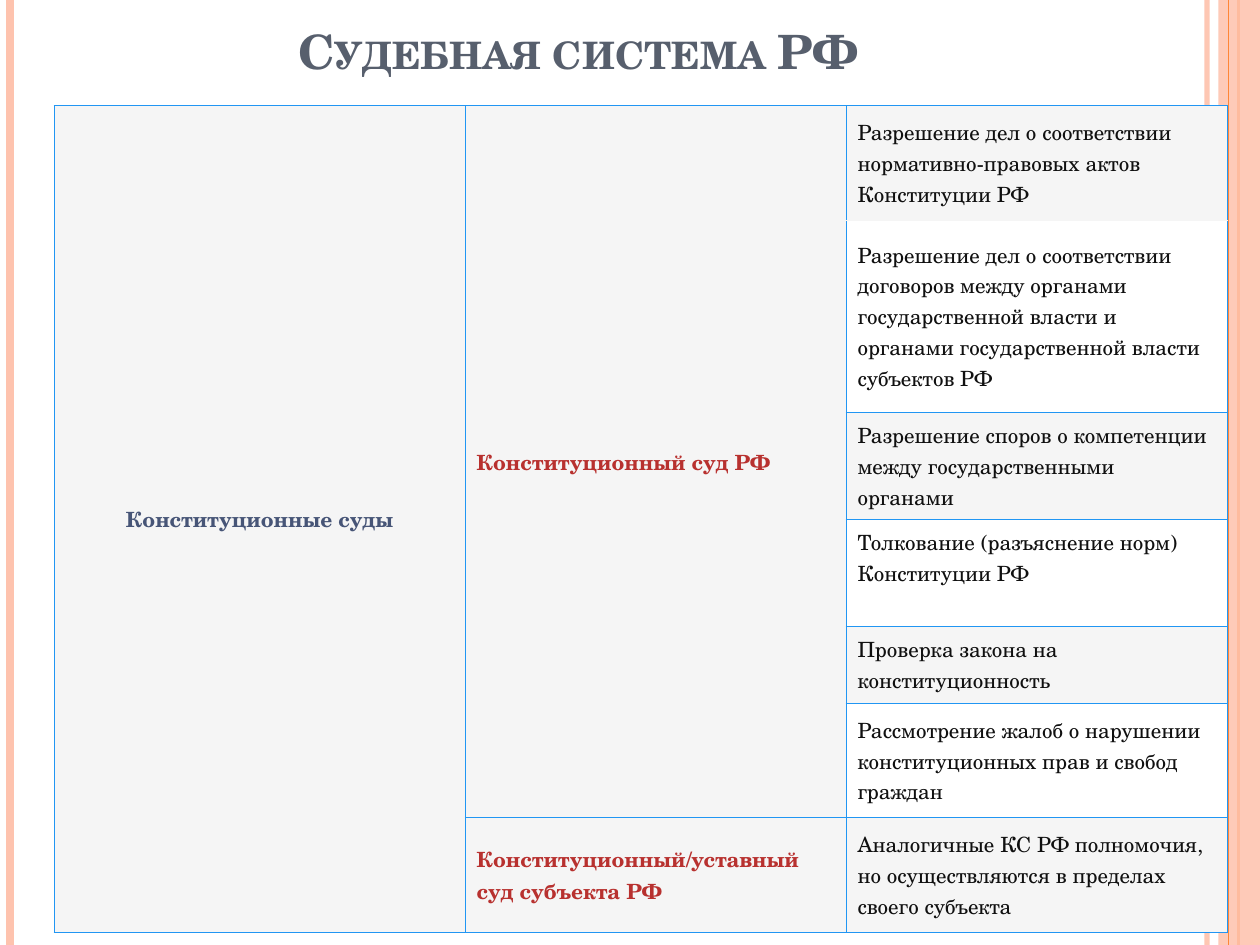
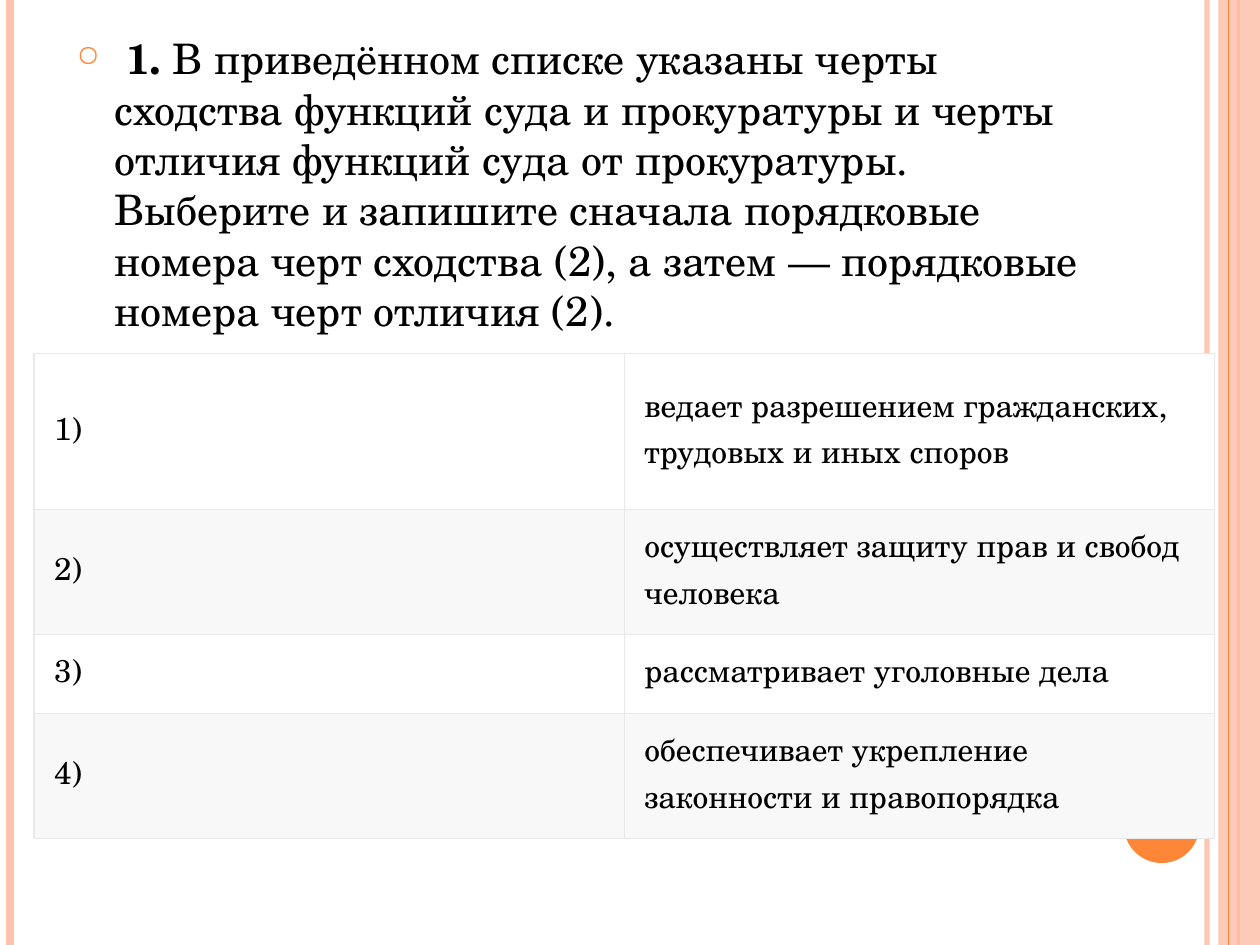
from lxml.etree import SubElement
from pptx import Presentation
from pptx.dml.color import RGBColor
from pptx.enum.shapes import MSO_CONNECTOR, MSO_SHAPE
from pptx.enum.text import MSO_ANCHOR, PP_ALIGN
from pptx.oxml.ns import qn
from pptx.util import Inches, Pt

W, H = Inches(10), Inches(7.5)
FONT = "TeX Gyre Schola"
PEACH, ORANGE, SLATE = "FEC3AE", "FE8637", "575F6D"
BLUE, NAVY, RED, INK = "2196F3", "475577", "B8312F", "101010"
WHITE, GREY, PALE, RULE, BLACK = "FFFFFF", "F5F5F5", "F8F8F8", "E9E9E9", "000000"

POWERS = [
    "Разрешение дел о соответствии нормативно-правовых актов Конституции РФ",
    "Разрешение дел о соответствии договоров между органами государственной власти "
    "и органами государственной власти субъектов РФ",
    "Разрешение споров о компетенции между государственными органами",
    "Толкование (разъяснение норм) Конституции РФ",
    "Проверка закона на конституционность",
    "Рассмотрение жалоб о нарушении конституционных прав и свобод граждан",
    "Аналогичные КС РФ полномочия, но осуществляются в пределах своего субъекта",
]
TRAITS = [
    "ведает разрешением гражданских, трудовых и иных споров",
    "осуществляет защиту прав и свобод человека",
    "рассматривает уголовные дела",
    "обеспечивает укрепление законности и правопорядка",
]
TASK = ("В приведённом списке указаны черты сходства функций суда и прокуратуры и черты "
        "отличия функций суда от прокуратуры. Выберите и запишите сначала порядковые "
        "номера черт сходства (2), а затем — порядковые номера черт отличия (2).")


def paint(fmt, color, alpha=100):
    """Set a solid colour on a fill or a line fill, with opacity in percent."""
    fmt.solid()
    fmt.fore_color.rgb = RGBColor.from_string(color)
    if alpha < 100:
        clr = fmt._xPr.find(qn("a:solidFill"))[0]
        SubElement(clr, qn("a:alpha"), val=str(alpha * 1000))


def place(box):
    """Turn a box in shares of the slide into lengths."""
    x, y, w, h = box
    return int(x * W), int(y * H), int(w * W), int(h * H)


def style(item, size, color, bold=False):
    """Set the font of a paragraph or a run."""
    item.font.name, item.font.size, item.font.bold = FONT, Pt(size), bold
    item.font.color.rgb = RGBColor.from_string(color)


def add_rule(slide, x, color, width, alpha=100):
    """Draw a full-height vertical line at a share of the width."""
    line = slide.shapes.add_connector(MSO_CONNECTOR.STRAIGHT, int(x * W), 0, int(x * W), H)
    line.line.width = Pt(width)
    paint(line.line.fill, color, alpha)
    SubElement(line._element.spPr, qn("a:effectLst"))


def add_block(slide, kind, box, color, alpha=100):
    """Draw a filled shape without outline."""
    sp = slide.shapes.add_shape(kind, *place(box))
    sp.shadow.inherit = False
    paint(sp.fill, color, alpha)
    sp.line.fill.background()


def add_frame(slide):
    """Draw the side bands and the dot that all slides share."""
    add_rule(slide, 0.958, PEACH, 3, 93)
    add_rule(slide, 0.008, PEACH, 4.5)
    add_rule(slide, 0.983, ORANGE, 1.5)
    add_block(slide, MSO_SHAPE.RECTANGLE, (0.967, 0, 0.033, 1), PEACH, 87)
    add_rule(slide, 0.975, ORANGE, 0.75)
    add_block(slide, MSO_SHAPE.OVAL, (0.892, 5 / 6, 0.06, 0.08), ORANGE)


def add_text(slide, box, anchor):
    """Add a wrapping text box and return its first paragraph."""
    tf = slide.shapes.add_textbox(*place(box)).text_frame
    tf.word_wrap, tf.vertical_anchor = True, anchor
    return tf.paragraphs[0]


def add_title(slide, box, text):
    """Add a centred title in small capitals."""
    p = add_text(slide, box, MSO_ANCHOR.BOTTOM)
    p.alignment = PP_ALIGN.CENTER
    r = p.add_run()
    r.text = text
    style(r, 27, SLATE, True)
    r.font._element.set("cap", "small")


def add_task(slide, box, number, text):
    """Add the bulleted wording of a task with its number in bold."""
    p = add_text(slide, box, MSO_ANCHOR.TOP)
    p.space_before = Pt(6)
    for part, bold in ((" ", False), (number, True), (" " + text, False)):
        r = p.add_run()
        r.text = part
        style(r, 24, BLACK, bold)
    pPr = p._p.get_or_add_pPr()
    pPr.set("marL", str(Inches(0.3)))
    pPr.set("indent", str(-Inches(0.3)))
    SubElement(SubElement(pPr, qn("a:buClr")), qn("a:srgbClr"), val=ORANGE)
    SubElement(pPr, qn("a:buSzPct"), val="70000")
    SubElement(pPr, qn("a:buChar"), char="○")


def add_grid(slide, box, cols, rows):
    """Add a plain table whose columns and rows share the box by weight."""
    x, y, w, h = place(box)
    table = slide.shapes.add_table(len(rows), len(cols), x, y, w, h).table
    table.first_row = table.horz_banding = False
    for col, weight in zip(table.columns, cols):
        col.width = int(w * weight / sum(cols))
    for row, weight in zip(table.rows, rows):
        row.height = int(h * weight / sum(rows))
    return table


def dress(cell, fill, border, insets, **sides):
    """Fill a cell, set its insets and border it, with other colours for named sides."""
    paint(cell.fill, fill)
    cell.vertical_anchor = MSO_ANCHOR.MIDDLE
    cell.margin_left, cell.margin_top, cell.margin_right, cell.margin_bottom = map(Inches, insets)
    tcPr = cell._tc.get_or_add_tcPr()
    for i, side in enumerate("LRTB"):
        ln = SubElement(tcPr, qn("a:ln" + side), w=str(Pt(0.75)))
        solid = SubElement(ln, qn("a:solidFill"))
        SubElement(solid, qn("a:srgbClr"), val=sides.get(side, border))
        tcPr.insert(i, ln)


def write(cell, text, size, color, bold=False, align=PP_ALIGN.LEFT):
    """Write one paragraph into a table cell."""
    p = cell.text_frame.paragraphs[0]
    p.text, p.alignment = text, align
    style(p, size, color, bold)


def add_courts(slide, box):
    """Add the table of constitutional courts and their powers."""
    table = add_grid(slide, box, (3.26, 3.02, 3.02), (0.91, 1.52, 0.85, 0.85, 0.61, 0.91, 0.91))
    insets = (0.09, 0.06, 0.09, 0.06)
    soft_sides = {0: {"B": GREY}, 1: {"T": GREY}}
    for i, power in enumerate(POWERS):
        for j in range(2):
            dress(table.cell(i, j), GREY, BLUE, insets)
        cell = table.cell(i, 2)
        dress(cell, WHITE if i % 2 else GREY, BLUE, insets, **soft_sides.get(i, {}))
        write(cell, power, 12, INK)
    table.cell(3, 2).vertical_anchor = MSO_ANCHOR.TOP
    table.cell(0, 0).merge(table.cell(6, 0))
    table.cell(0, 1).merge(table.cell(5, 1))
    write(table.cell(0, 0), "Конституционные суды", 12, NAVY, True, PP_ALIGN.CENTER)
    write(table.cell(0, 1), "Конституционный суд РФ", 12, RED, True)
    write(table.cell(6, 1), "Конституционный/уставный суд субъекта РФ", 12, RED, True)


def add_traits(slide, box):
    """Add the numbered table of traits to choose from."""
    table = add_grid(slide, box, (1, 1), (1.24, 0.99, 0.63, 0.99))
    for i, trait in enumerate(TRAITS):
        for j, text in enumerate((f"{i + 1})", trait)):
            cell = table.cell(i, j)
            dress(cell, PALE if i % 2 else WHITE, RULE, (0.16, 0.1, 0.16, 0.16))
            write(cell, text, 18, BLACK)


def add_slide(prs):
    """Add a blank slide with the shared frame."""
    slide = prs.slides.add_slide(prs.slide_layouts[6])
    paint(slide.background.fill, WHITE)
    add_frame(slide)
    return slide


def main():
    """Build both slides and save them."""
    prs = Presentation()
    prs.slide_width, prs.slide_height = W, H
    courts = add_slide(prs)
    add_title(courts, (0.05, 0.04, 0.817, 0.05), "Судебная система РФ")
    add_courts(courts, (0.043, 0.112, 0.931, 0.875))
    task = add_slide(prs)
    add_task(task, (0.051, 0.028, 0.817, 0.347), "1.", TASK)
    add_traits(task, (0.027, 0.374, 0.937, 0.513))
    prs.save("out.pptx")


if __name__ == "__main__":
    main()
